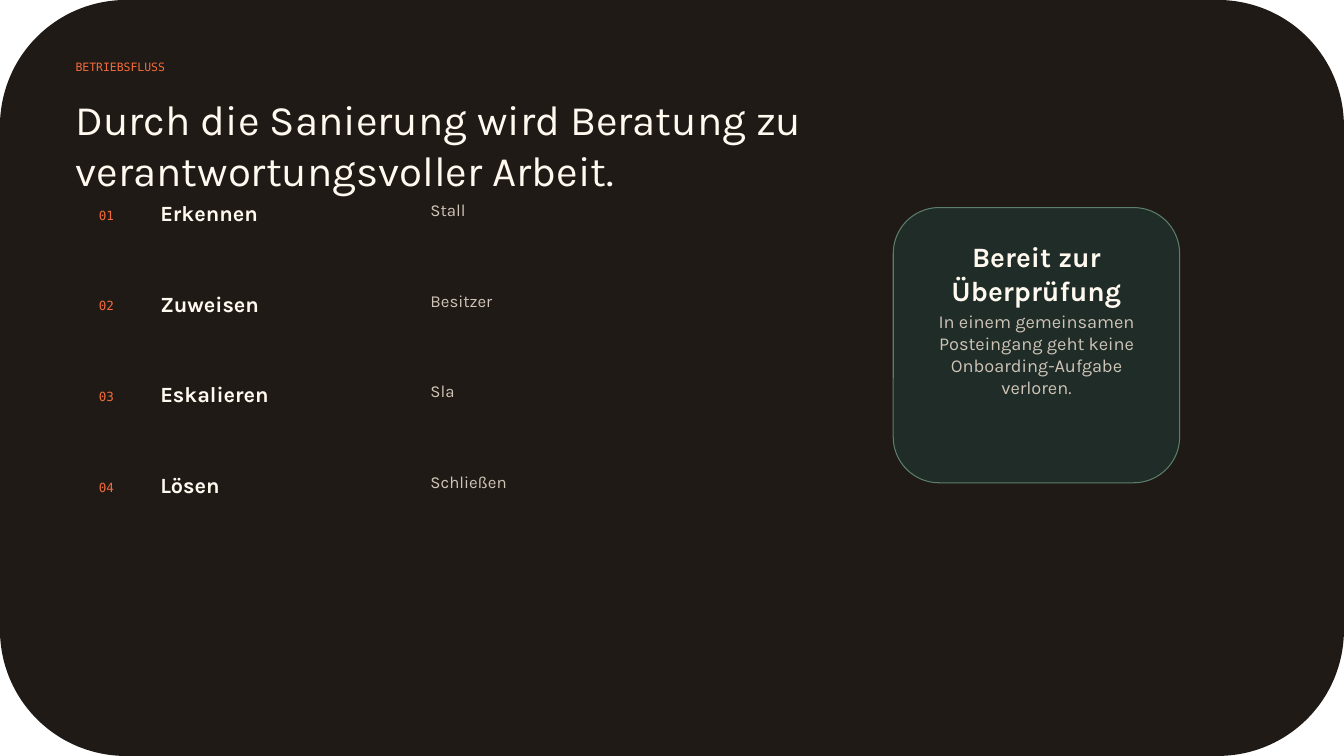
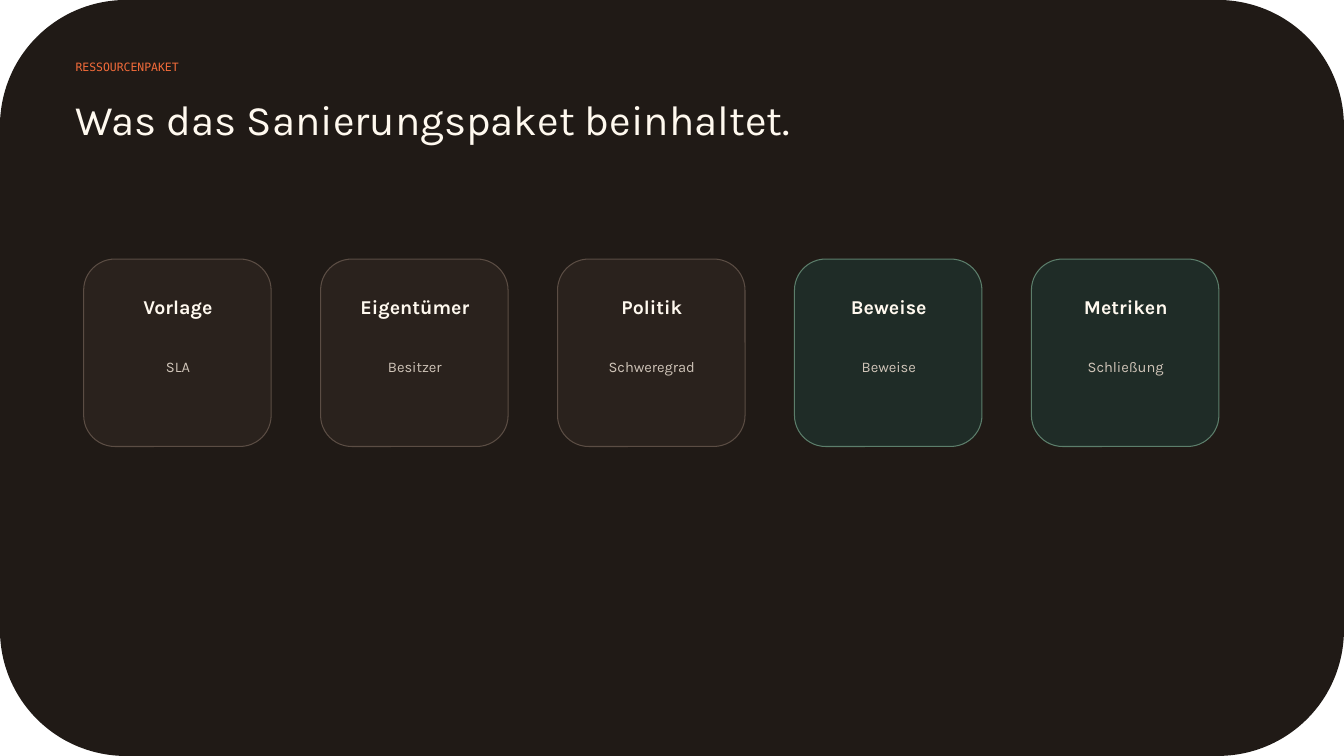
"""Build two dark slides: a four-step workflow and a five-card resource kit."""
from pptx import Presentation
from pptx.dml.color import RGBColor
from pptx.enum.shapes import MSO_SHAPE
from pptx.enum.text import PP_ALIGN
from pptx.util import Inches, Pt

ROUNDED = MSO_SHAPE.ROUNDED_RECTANGLE
LEFT, CENTER = PP_ALIGN.LEFT, PP_ALIGN.CENTER

WIDTH, HEIGHT = 13.33, 7.5
MARGIN = 0.75
BLANK = 6

SANS, MONO = "Karla", "DejaVu Sans Mono"
BACKDROP = RGBColor(0x20, 0x1A, 0x16)
ORANGE = RGBColor(0xF2, 0x6B, 0x3A)
CREAM = RGBColor(0xFF, 0xF9, 0xEF)
SAND = RGBColor(0xCF, 0xC4, 0xB8)
BROWN = (RGBColor(0x2A, 0x22, 0x1D), RGBColor(0x5B, 0x4D, 0x44))
GREEN = (RGBColor(0x1F, 0x2C, 0x27), RGBColor(0x5C, 0x7E, 0x6B))

STEPS = [("Erkennen", "Stall"), ("Zuweisen", "Besitzer"),
         ("Eskalieren", "Sla"), ("Lösen", "Schließen")]
STEP_TOP, STEP_PITCH = 1.98, 0.9

CARDS = [("Vorlage", "SLA", BROWN), ("Eigentümer", "Besitzer", BROWN),
         ("Politik", "Schweregrad", BROWN), ("Beweise", "Beweise", GREEN),
         ("Metriken", "Schließung", GREEN)]
CARD_LEFT, CARD_TOP, CARD_SIZE, CARD_PITCH = 0.83, 2.57, 1.86, 2.35


def add_text(s, text, x, y, w, h, size, color=CREAM, font=SANS, bold=False, align=LEFT):
    """Add a wrapping text box without insets."""
    tf = s.shapes.add_textbox(Inches(x), Inches(y), Inches(w), Inches(h)).text_frame
    tf.word_wrap = True
    tf.margin_left = tf.margin_right = tf.margin_top = tf.margin_bottom = 0
    p = tf.paragraphs[0]
    p.alignment = align
    r = p.add_run()
    r.text = text
    r.font.name, r.font.size, r.font.bold = font, Pt(size), bold
    r.font.color.rgb = color


def add_panel(s, x, y, w, h, fill, line=None):
    """Add a rounded rectangle, outlined when a line colour is given."""
    sp = s.shapes.add_shape(ROUNDED, Inches(x), Inches(y), Inches(w), Inches(h))
    sp.shadow.inherit = False
    sp.fill.solid()
    sp.fill.fore_color.rgb = fill
    if line is None:
        sp.line.fill.background()
    else:
        sp.line.color.rgb = line
        sp.line.width = Pt(0.75)


def add_slide(prs, label, title, title_width):
    """Add a slide with the shared backdrop, label and title."""
    s = prs.slides.add_slide(prs.slide_layouts[BLANK])
    add_panel(s, 0, 0, WIDTH, HEIGHT, BACKDROP)
    add_text(s, label, MARGIN, 0.6, 4.59, 0.28, 8.2, color=ORANGE, font=MONO)
    add_text(s, title, MARGIN, 0.93, title_width, 0.71, 30)
    return s


def add_step(s, index, name, detail):
    """Add one numbered row of the workflow."""
    y = STEP_TOP + index * STEP_PITCH
    add_text(s, f"{index + 1:02d}", 0.98, y + 0.08, 0.55, 0.24, 9, color=ORANGE, font=MONO)
    add_text(s, name, 1.59, y, 2.84, 0.28, 15.5, bold=True)
    add_text(s, detail, 4.27, y, 3.94, 0.31, 12, color=SAND)


def add_outcome(s, heading, body):
    """Add the green panel with its heading and body text."""
    x, y, w, pad = 8.86, 2.06, 2.84, 0.27
    add_panel(s, x, y, w, 2.73, *GREEN)
    inner = w - 2 * pad
    add_text(s, heading, x + pad, y + 0.32, inner, 0.46, 20, bold=True, align=CENTER)
    add_text(s, body, x + pad, y + 1.02, inner, 0.98, 13, color=SAND, align=CENTER)


def add_card(s, index, name, detail, colors):
    """Add one card of the resource kit."""
    x = CARD_LEFT + index * CARD_PITCH
    add_panel(s, x, CARD_TOP, CARD_SIZE, CARD_SIZE, *colors)
    add_text(s, name, x + 0.19, CARD_TOP + 0.36, 1.49, 0.33, 14, bold=True, align=CENTER)
    add_text(s, detail, x + 0.16, CARD_TOP + 0.98, 1.55, 0.57, 10.5, color=SAND, align=CENTER)


def main():
    """Build and save the presentation."""
    prs = Presentation()
    prs.slide_width, prs.slide_height = Inches(WIDTH), Inches(HEIGHT)

    s = add_slide(prs, "BETRIEBSFLUSS",
                  "Durch die Sanierung wird Beratung zu verantwortungsvoller Arbeit.", 9.41)
    for i, step in enumerate(STEPS):
        add_step(s, i, *step)
    add_outcome(s, "Bereit zur Überprüfung",
                "In einem gemeinsamen Posteingang geht keine Onboarding-Aufgabe verloren.")

    s = add_slide(prs, "RESSOURCENPAKET", "Was das Sanierungspaket beinhaltet.", 8.31)
    for i, card in enumerate(CARDS):
        add_card(s, i, *card)

    prs.save("out.pptx")


if __name__ == "__main__":
    main()
